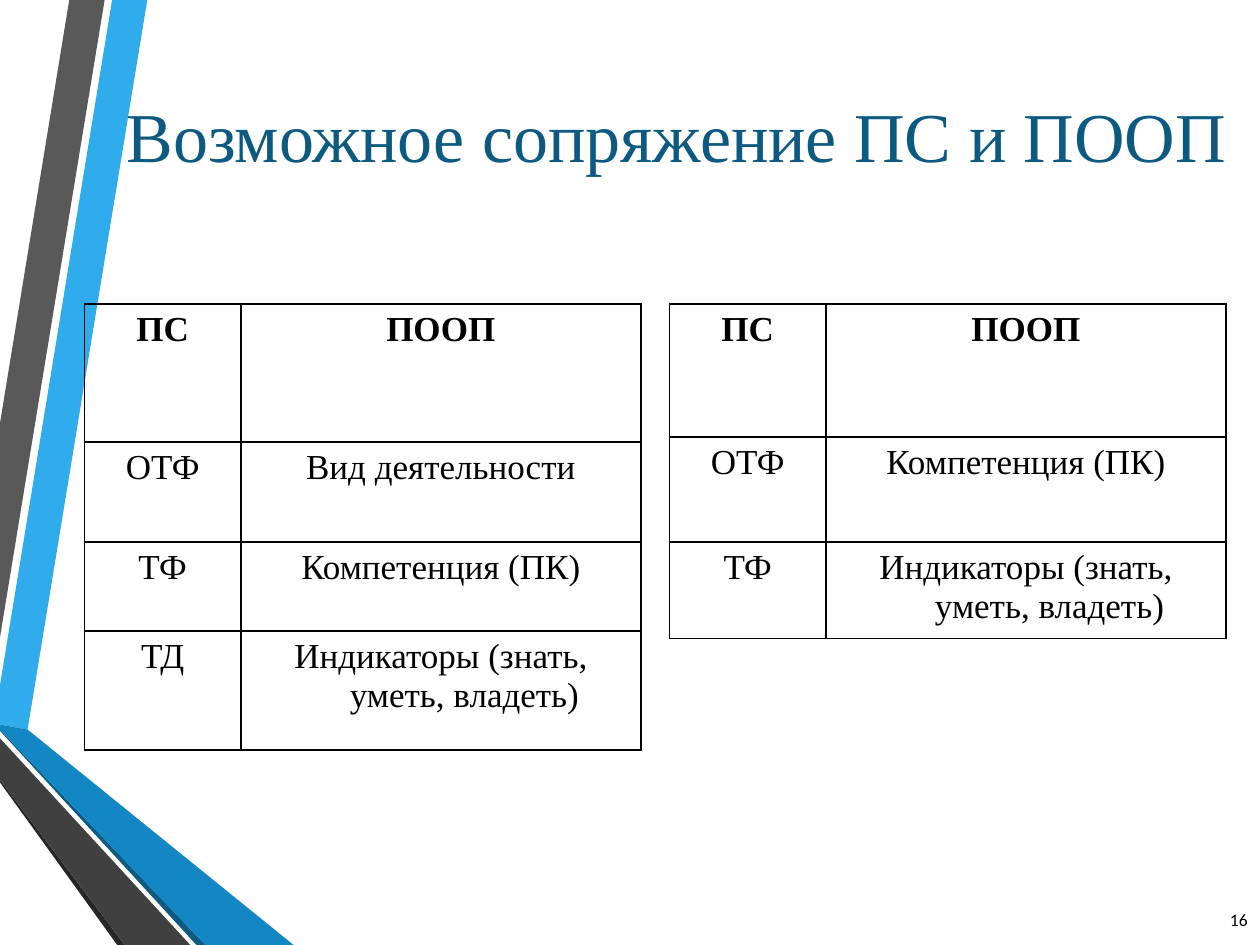
from lxml import etree
from pptx import Presentation
from pptx.dml.color import RGBColor
from pptx.enum.text import MSO_ANCHOR, PP_ALIGN
from pptx.oxml.ns import qn
from pptx.util import Pt

CENTER, RIGHT = PP_ALIGN.CENTER, PP_ALIGN.RIGHT
MIDDLE = MSO_ANCHOR.MIDDLE

BLACK = RGBColor(0, 0, 0)
NAVY = RGBColor(0x0C, 0x5A, 0x82)
SKY = RGBColor(0x30, 0xAC, 0xEC)
BLUE = RGBColor(0x12, 0x87, 0xC3)
GRAY = RGBColor(0x59, 0x59, 0x59)
DARK_GRAY = RGBColor(0x40, 0x40, 0x40)
CHARCOAL = RGBColor(0x26, 0x26, 0x26)

SERIF, SANS = "Times New Roman", "Calibri"
WIDTH, HEIGHT = 720, 540

TITLE = "Возможное сопряжение ПС и ПООП "
PAGE_NUMBER = "16"

RIBBONS = [
    (SKY, [(0, 391.7), (0, 414), (15.8, 416.9), (84.2, 0), (64.1, 0)]),
    (GRAY, [(59.8, 0), (39.6, 0), (0, 241.9), (0, 364.3)]),
    (CHARCOAL, [(0, 445.7), (0, 447.1), (67, HEIGHT), (71.3, HEIGHT)]),
    (NAVY, [(0, 416.9), (0, 417.6), (112.3, HEIGHT), (117.4, HEIGHT)]),
    (BLUE, [(0, 416.9), (117.4, HEIGHT), (167.8, HEIGHT), (15.8, 416.9), (0, 414)]),
    (DARK_GRAY, [(0, 445.7), (71.3, HEIGHT), (108.7, HEIGHT), (0, 421.9)]),
]

HEADER = ("ПС", "ПООП")
INDICATORS = "Индикаторы (знать, уметь, владеть)"
MAPPINGS = [
    {"left": 382.5,
     "rows": [HEADER, ("ОТФ", "Компетенция (ПК)"), ("ТФ", INDICATORS)],
     "heights": [76, 60.2, 55.2]},
    {"left": 48.2,
     "rows": [HEADER, ("ОТФ", "Вид деятельности"), ("ТФ", "Компетенция (ПК)"),
              ("ТД", INDICATORS)],
     "heights": [79, 57.1, 51, 68]},
]
MAPPING_TOP = 173.6
COLUMN_WIDTHS = [89.5, 228.5]
HANGING = 27


def write(frame, text, size, font=SERIF, color=BLACK, bold=False,
          align=CENTER, hanging=0):
    paragraph = frame.paragraphs[0]
    paragraph.alignment = align
    if hanging:
        properties = paragraph._p.get_or_add_pPr()
        properties.set("marL", str(Pt(hanging)))
        properties.set("indent", str(-Pt(hanging)))
    run = paragraph.add_run()
    run.text = text
    run.font.size = Pt(size)
    run.font.name = font
    run.font.bold = bold
    run.font.color.rgb = color


def add_ribbon(slide, color, points):
    corners = [(Pt(x), Pt(y)) for x, y in points]
    builder = slide.shapes.build_freeform(*corners[0], scale=1.0)
    builder.add_line_segments(corners[1:], close=True)
    ribbon = builder.convert_to_shape()
    ribbon.shadow.inherit = False
    ribbon.fill.solid()
    ribbon.fill.fore_color.rgb = color
    ribbon.line.fill.background()


def outline(cell):
    properties = cell._tc.get_or_add_tcPr()
    for side in ("a:lnL", "a:lnR", "a:lnT", "a:lnB"):
        edge = etree.SubElement(properties, qn(side), w=str(Pt(1)))
        fill = etree.SubElement(edge, qn("a:solidFill"))
        etree.SubElement(fill, qn("a:srgbClr"), val=str(BLACK))
    cell.fill.background()


def add_mapping(slide, left, rows, heights):
    table = slide.shapes.add_table(
        len(rows), len(COLUMN_WIDTHS), Pt(left), Pt(MAPPING_TOP),
        Pt(sum(COLUMN_WIDTHS)), Pt(sum(heights))).table
    table.first_row = False
    table.horz_banding = False
    for column, width in zip(table.columns, COLUMN_WIDTHS):
        column.width = Pt(width)
    for row, height, texts in zip(table.rows, heights, rows):
        row.height = Pt(height)
        for cell, text in zip(row.cells, texts):
            outline(cell)
            write(cell.text_frame, text, size=20, bold=texts is HEADER, hanging=HANGING)


def main():
    deck = Presentation()
    deck.slide_width, deck.slide_height = Pt(WIDTH), Pt(HEIGHT)
    slide = deck.slides.add_slide(deck.slide_layouts[5])

    for color, points in RIBBONS:
        add_ribbon(slide, color, points)

    title = slide.shapes.title
    title.left, title.top, title.width, title.height = Pt(54), Pt(31.7), Pt(675), Pt(90)
    title.text_frame.vertical_anchor = MIDDLE
    write(title.text_frame, TITLE, size=40, color=NAVY)
    title._element.getparent().append(title._element)

    for mapping in MAPPINGS:
        add_mapping(slide, **mapping)

    number = slide.shapes.add_textbox(Pt(686.2), Pt(511.2), Pt(33.8), Pt(28.8)).text_frame
    number.word_wrap = True
    number.vertical_anchor = MIDDLE
    write(number, PAGE_NUMBER, size=10, font=SANS, align=RIGHT)

    deck.save("out.pptx")


if __name__ == "__main__":
    main()
